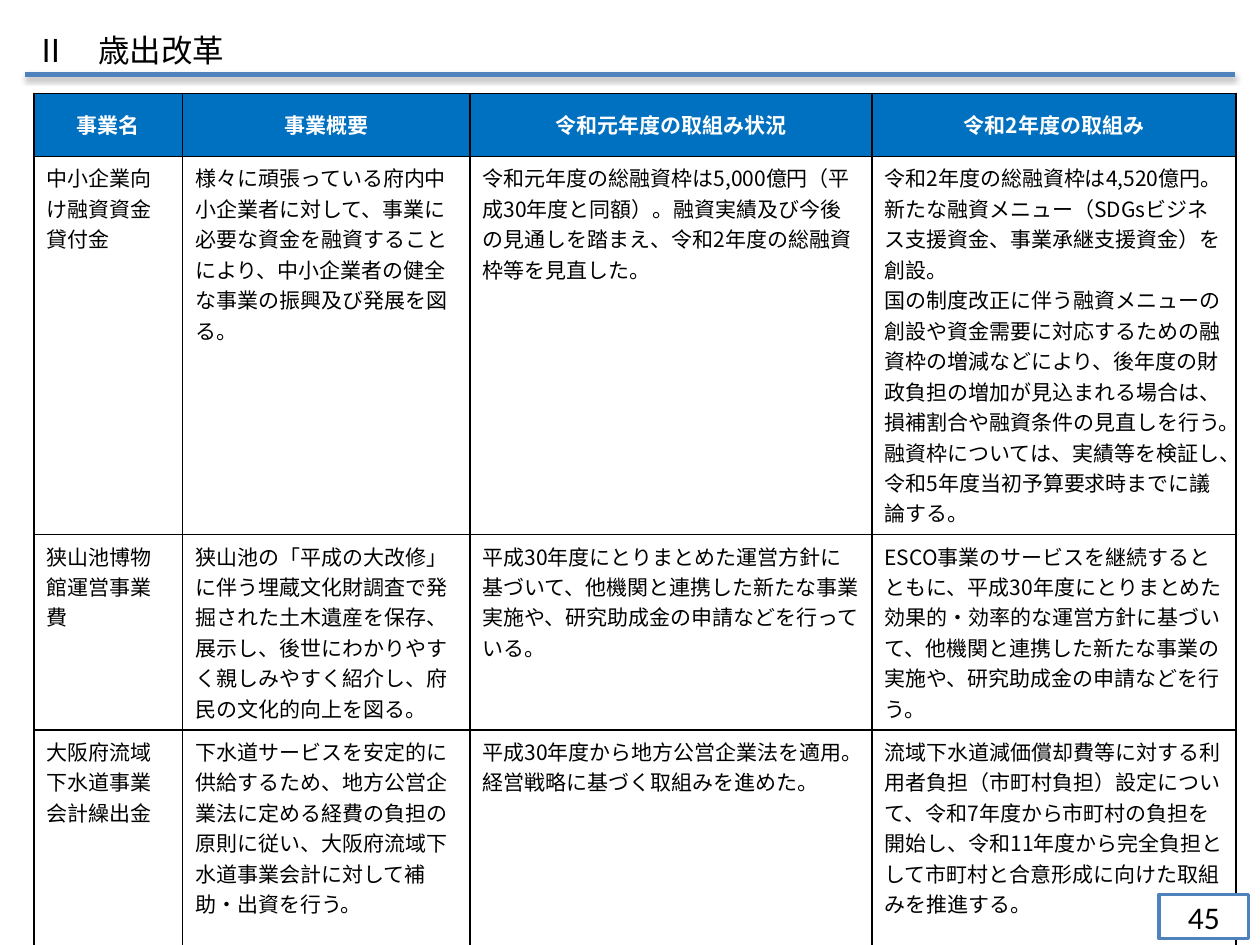
"""Build the expenditure reform slide with its table of programmes."""
from lxml import etree
from pptx import Presentation
from pptx.dml.color import RGBColor
from pptx.enum import shapes, text
from pptx.oxml import parse_xml
from pptx.oxml.ns import nsdecls, qn
from pptx.util import Inches, Pt

COLORS = {"header": "0070C0", "accent": "4F81BD", "ink": "000000", "paper": "FFFFFF"}
FONT = "Noto Sans CJK JP"
WIDTHS = [1.18, 2.28, 3.19, 2.89]
HEIGHTS = [0.5, 2.06, 1.43, 1.94]
ROWS = [
    ["事業名", "事業概要", "令和元年度の取組み状況", "令和2年度の取組み"],
    [
        "中小企業向け融資資金貸付金",
        "様々に頑張っている府内中小企業者に対して、事業に必要な資金を融資することにより、中小企業者の健全な事業の振興及び発展を図る。",
        "令和元年度の総融資枠は5,000億円（平成30年度と同額）。融資実績及び今後の見通しを踏まえ、令和2年度の総融資枠等を見直した。",
        "令和2年度の総融資枠は4,520億円。新たな融資メニュー（SDGsビジネス支援資金、事業承継支援資金）を創設。\n"
        "国の制度改正に伴う融資メニューの創設や資金需要に対応するための融資枠の増減などにより、後年度の財政負担の増加が見込まれる場合は、損補割合や融資条件の見直しを行う。\n"
        "融資枠については、実績等を検証し、令和5年度当初予算要求時までに議論する。",
    ],
    [
        "狭山池博物館運営事業費",
        "狭山池の「平成の大改修」に伴う埋蔵文化財調査で発掘された土木遺産を保存、展示し、後世にわかりやすく親しみやすく紹介し、府民の文化的向上を図る。",
        "平成30年度にとりまとめた運営方針に基づいて、他機関と連携した新たな事業実施や、研究助成金の申請などを行っている。",
        "ESCO事業のサービスを継続するとともに、平成30年度にとりまとめた効果的・効率的な運営方針に基づいて、他機関と連携した新たな事業の実施や、研究助成金の申請などを行う。",
    ],
    [
        "大阪府流域下水道事業会計繰出金",
        "下水道サービスを安定的に供給するため、地方公営企業法に定める経費の負担の原則に従い、大阪府流域下水道事業会計に対して補助・出資を行う。",
        "平成30年度から地方公営企業法を適用。経営戦略に基づく取組みを進めた。",
        "流域下水道減価償却費等に対する利用者負担（市町村負担）設定について、令和7年度から市町村の負担を開始し、令和11年度から完全負担として市町村と合意形成に向けた取組みを推進する。",
    ],
]


def style_text(tf, size, color="ink", bold=False, font=FONT, align=None):
    for p in tf.paragraphs:
        p.alignment = align
        for r in p.runs:
            r.font.size, r.font.bold, r.font.name = Pt(size), bold, font
            r.font.color.rgb = RGBColor.from_string(COLORS[color])
            etree.SubElement(r.font._element, qn("a:ea"), typeface=font)


def add_borders(cell):
    for i, side in enumerate(("lnL", "lnR", "lnT", "lnB")):
        cell._tc.get_or_add_tcPr().insert(i, parse_xml(
            f'<a:{side} {nsdecls("a")} w="12700"><a:solidFill>'
            f'<a:srgbClr val="{COLORS["ink"]}"/></a:solidFill></a:{side}>'))


prs = Presentation()
prs.slide_width, prs.slide_height = Inches(10), Inches(7.5)
s = prs.slides.add_slide(prs.slide_layouts[6])

table = s.shapes.add_table(len(ROWS), len(WIDTHS), Inches(0.27), Inches(0.74),
                           Inches(sum(WIDTHS)), Inches(sum(HEIGHTS))).table
table.horz_banding = False
for col, width in zip(table.columns, WIDTHS):
    col.width = Inches(width)
for i, (row, height) in enumerate(zip(table.rows, HEIGHTS)):
    row.height = Inches(height)
    for cell, words in zip(row.cells, ROWS[i]):
        cell.text_frame.text = words
        if i == 0:
            cell.fill.solid()
            cell.fill.fore_color.rgb = RGBColor.from_string(COLORS["header"])
            cell.vertical_anchor = text.MSO_ANCHOR.MIDDLE
            style_text(cell.text_frame, 12, "paper", True, align=text.PP_ALIGN.CENTER)
        else:
            cell.fill.background()
            style_text(cell.text_frame, 12)
        add_borders(cell)

title = s.shapes.add_textbox(Inches(0.18), Inches(0.2), Inches(8.9), Inches(0.4))
title.text_frame.word_wrap = True
title.text_frame.text = "Ⅱ　歳出改革"
style_text(title.text_frame, 18)

rule = s.shapes.add_connector(shapes.MSO_CONNECTOR.STRAIGHT, Inches(0.2), Inches(0.59),
                              Inches(9.8), Inches(0.59))
rule.line.color.rgb = RGBColor.from_string(COLORS["accent"])
rule.line.width = Pt(3)
rule._element.spPr.append(parse_xml(
    f'<a:effectLst {nsdecls("a")}><a:outerShdw blurRad="{Pt(3.1)}" dist="{Pt(1.8)}" '
    f'dir="5400000" rotWithShape="0"><a:srgbClr val="{COLORS["ink"]}">'
    '<a:alpha val="35000"/></a:srgbClr></a:outerShdw></a:effectLst>'))

page = s.shapes.add_shape(shapes.MSO_SHAPE.RECTANGLE, Inches(9.2), Inches(7.1),
                          Inches(0.71), Inches(0.35))
page.shadow.inherit = False
page.fill.solid()
page.fill.fore_color.rgb = RGBColor.from_string(COLORS["paper"])
page.line.color.rgb = RGBColor.from_string(COLORS["accent"])
page.line.width = Pt(2)
page.text_frame.text = "45"
page.text_frame.vertical_anchor = text.MSO_ANCHOR.MIDDLE
style_text(page.text_frame, 18, font="Calibri", align=text.PP_ALIGN.CENTER)

prs.save("out.pptx")
